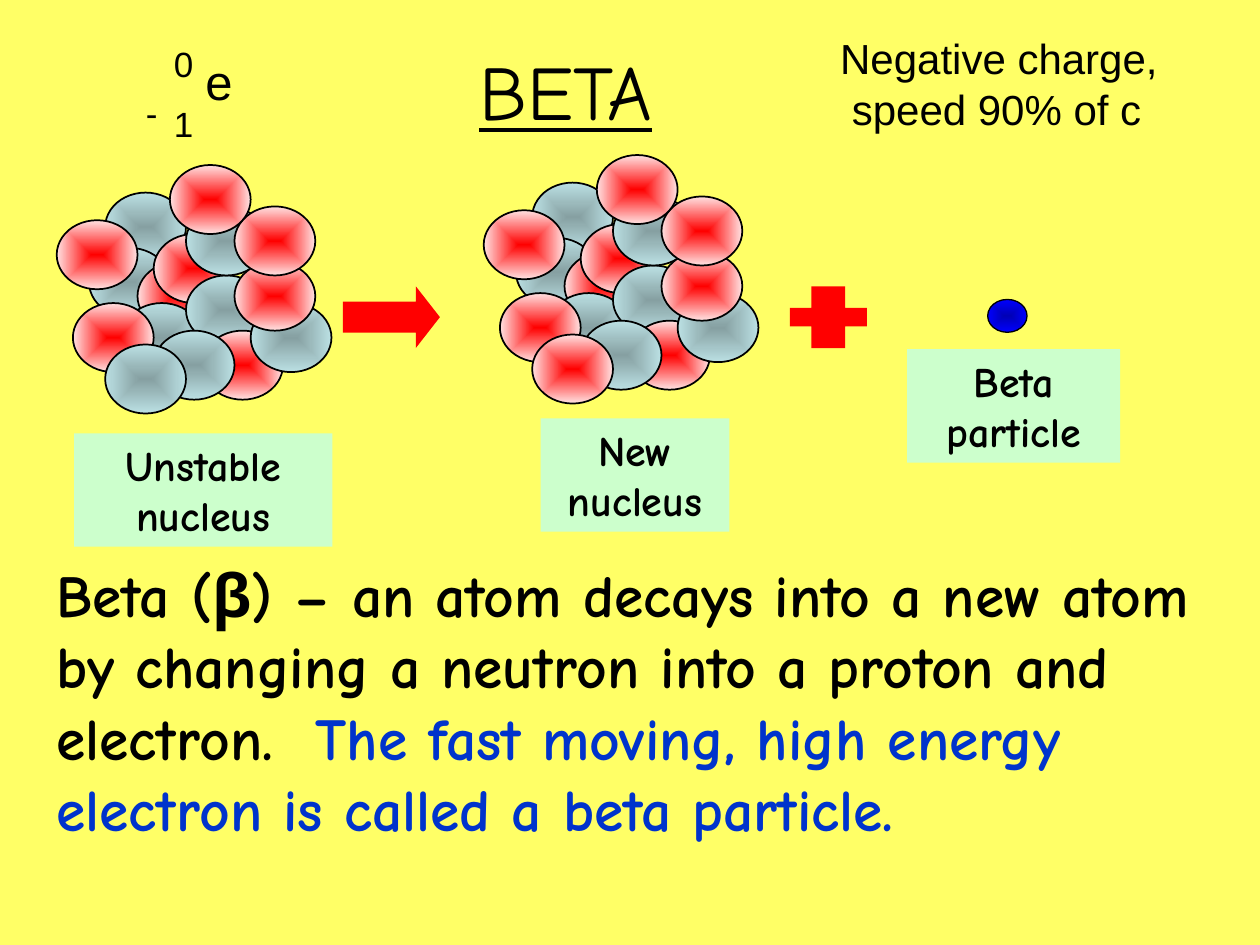
from lxml import etree
from pptx import Presentation
from pptx.dml import color
from pptx.enum import shapes, text
from pptx.oxml import ns
from pptx.util import Pt

GREY = ("86A0A2", "BBE0E3")
RED = ("FF0000", "FFE2E2")
BLUE = ("0000B6", "0000FF")
NUCLEONS = [
    (3, 2, GREY), (2, 6, GREY), (5, 7, RED), (6, 5, RED),
    (4, 10, GREY), (0, 4, RED), (1, 10, RED), (8, 8, GREY),
    (9, 12, RED), (12, 10, GREY), (8, 3, GREY), (11, 7, RED),
    (6, 12, GREY), (11, 3, RED), (7, 0, RED),
]


def rgb(code):
    """Return the colour for a hex string."""
    return color.RGBColor.from_string(code)


def points(box):
    """Convert a box given in points to lengths."""
    return [Pt(length) for length in box]


def write(frame, paragraphs, size, font, align=text.PP_ALIGN.LEFT, bold=False, wrap=True):
    """Fill a text frame with paragraphs, each a list of text and colour pairs."""
    frame.word_wrap = wrap
    frame.vertical_anchor = text.MSO_ANCHOR.TOP
    for index, pieces in enumerate(paragraphs):
        paragraph = frame.paragraphs[0] if index == 0 else frame.add_paragraph()
        paragraph.alignment = align
        paragraph.font.size = Pt(size)
        paragraph.font.name = font
        paragraph.font.bold = bold
        for words, code in pieces:
            run = paragraph.add_run()
            run.text = words
            run.font.color.rgb = rgb(code)


def add_solid(parent, preset, box, code):
    """Add a preset shape with a plain fill and no outline."""
    solid = parent.add_shape(preset, *points(box))
    solid.shadow.inherit = False
    solid.fill.solid()
    solid.fill.fore_color.rgb = rgb(code)
    solid.line.fill.background()
    return solid


def add_ball(parent, box, shades, outline):
    """Add an outlined ball shaded from its centre to its edge."""
    ball = parent.add_shape(shapes.MSO_SHAPE.OVAL, *points(box))
    ball.shadow.inherit = False
    ball.line.color.rgb = rgb("000000")
    ball.line.width = Pt(outline)
    ball.fill.gradient()
    for stop, code in zip(ball.fill.gradient_stops, shades):
        stop.color.rgb = rgb(code)
    gradient = ball.element.spPr.find(ns.qn("a:gradFill"))
    gradient.remove(gradient.find(ns.qn("a:lin")))
    radial = etree.SubElement(gradient, ns.qn("a:path"), {"path": "shape"})
    etree.SubElement(radial, ns.qn("a:fillToRect"), dict.fromkeys("ltrb", "50000"))


def add_nucleus(slide, box, last_shades):
    """Add a cluster of nucleons on a grid of 17 by 18 cells."""
    left, top, width, height = box
    column, row = width / 17, height / 18
    cluster = slide.shapes.add_group_shape().shapes
    for x, y, shades in NUCLEONS + [(3, 13, last_shades)]:
        place = (left + x * column, top + y * row, 5 * column, 5 * row)
        add_ball(cluster, place, shades, 1)


def add_label(slide, box, caption):
    """Add a green caption box."""
    label = add_solid(slide.shapes, shapes.MSO_SHAPE.RECTANGLE, box, "CCFFCC")
    write(label.text_frame, [[(caption, "000000")]], 24, "Comic Neue",
          text.PP_ALIGN.CENTER, bold=True)


def add_heading(slide, box):
    """Place the underlined title."""
    title = slide.shapes.title
    title.left, title.top, title.width, title.height = points(box)
    write(title.text_frame, [[("BETA", "000000")]], 44, "Comic Neue", text.PP_ALIGN.CENTER)
    title.text_frame.vertical_anchor = text.MSO_ANCHOR.MIDDLE
    title.text_frame.paragraphs[0].font.underline = True


def add_symbol(slide, box):
    """Add the electron symbol with its mass and charge numbers."""
    left, top = box[:2]
    symbol = slide.shapes.add_group_shape().shapes
    for sign, x, y, width, height, size in [
        ("-", 0, 28, 21, 31, 20), ("1", 16, 34, 26, 31, 20),
        ("0", 16, 0, 26, 31, 20), ("e", 34, 5, 30, 41, 28),
    ]:
        part = symbol.add_textbox(*points((left + x, top + y, width, height)))
        write(part.text_frame, [[(sign, "000000")]], size, "Arial", wrap=False)


def add_properties(slide, box):
    """Add the charge and speed of the particle."""
    properties = slide.shapes.add_textbox(*points(box)).text_frame
    write(properties, [[("Negative charge,", "000000")], [("speed 90% of c", "000000")]],
          24, "Arial")
    speed = properties.paragraphs[1]
    speed.font.element.getparent().set("marL", str(Pt(6.67))) if hasattr(
        speed.font, "element") else speed._p.get_or_add_pPr().set("marL", str(Pt(6.67)))


def add_decay(slide, box):
    """Add the decay of a nucleus into a new nucleus and a beta particle."""
    left, top = box[:2]
    add_nucleus(slide, (left, top + 5.7, 157, 142), GREY)
    add_nucleus(slide, (left + 244, top, 157, 142), RED)
    add_ball(slide.shapes, (left + 532, top + 82.5, 22.5, 18.8), BLUE, 0.75)
    arrow = add_solid(slide.shapes, shapes.MSO_SHAPE.RIGHT_ARROW,
                      (left + 163.5, top + 75, 55.5, 35.3), "FF0000")
    arrow.adjustments[1] = 0.39
    plus = add_solid(slide.shapes, shapes.MSO_SHAPE.CROSS,
                     (left + 419, top + 75, 44, 35.3), "FF0000")
    plus.adjustments[0] = 0.35
    for caption, x, y, width in [
        ("Unstable nucleus", 10, 159, 147.6),
        ("New nucleus", 276.5, 150.5, 108),
        ("Beta particle", 486, 111, 121.7),
    ]:
        add_label(slide, (left + x, top + y, width, 64.8), caption)


def add_definition(slide, box):
    """Add the explanation of beta decay."""
    definition = slide.shapes.add_textbox(*points(box))
    write(definition.text_frame, [[
        ("Beta (β) – an atom decays into a new atom by changing a neutron "
         "into a proton and electron.  ", "000000"),
        ("The fast moving, high energy electron is called a beta particle.", "0033CC"),
    ]], 34, "Comic Neue", bold=True)


def main():
    """Build and save the slide."""
    deck = Presentation()
    deck.slide_width, deck.slide_height = Pt(720), Pt(540)
    slide = deck.slides.add_slide(deck.slide_layouts[5])
    slide.background.fill.solid()
    slide.background.fill.fore_color.rgb = rgb("FFFF66")
    add_definition(slide, (25.2, 315.4, 669, 211))
    add_decay(slide, (32.4, 88.6, 608, 224))
    add_heading(slide, (-0.7, 15.1, 648, 72))
    add_symbol(slide, (76.3, 20.9, 64, 65))
    add_properties(slide, (473, 15.1, 394, 94.3))
    deck.save("out.pptx")


if __name__ == "__main__":
    main()
